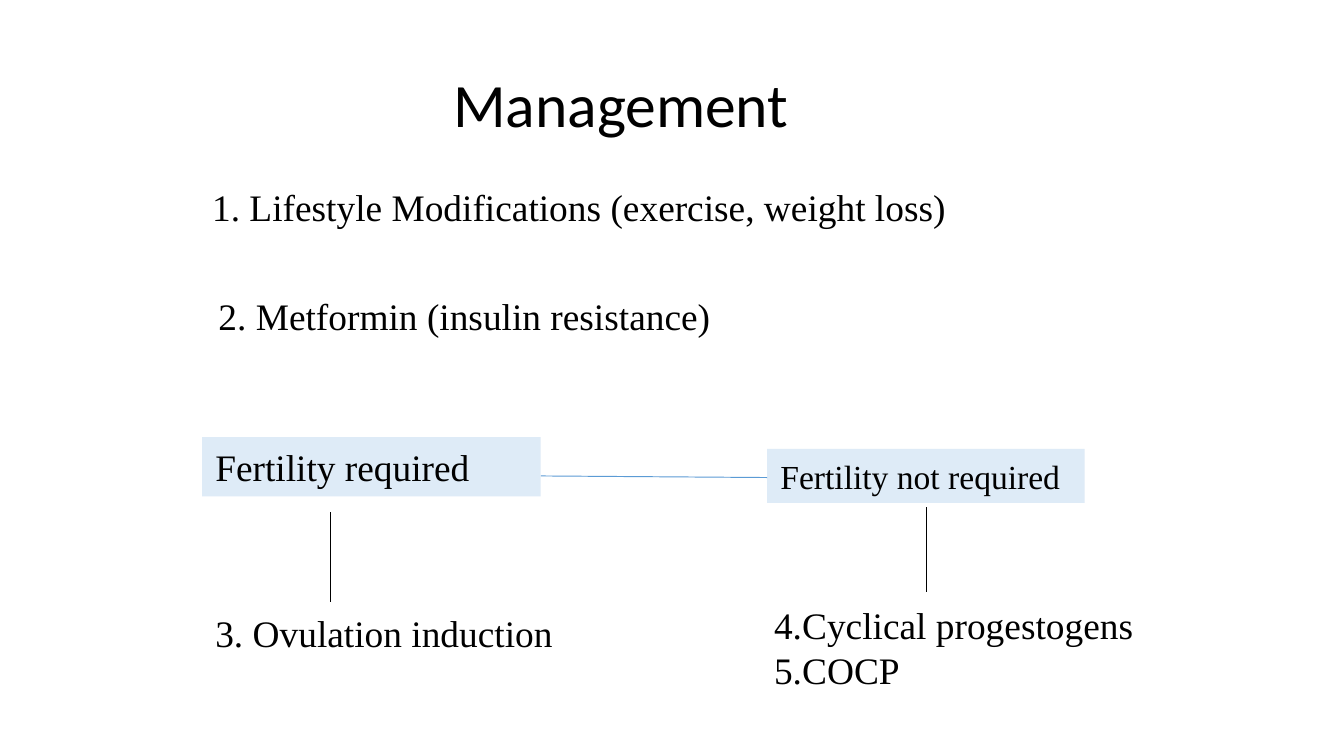
from dataclasses import dataclass

from lxml import etree
from pptx import Presentation
from pptx.dml.color import RGBColor
from pptx.enum import shapes, text
from pptx.oxml import ns
from pptx.util import Cm, Pt


@dataclass(frozen=True)
class Theme:
    ink: RGBColor = RGBColor(0x00, 0x00, 0x00)
    panel: RGBColor = RGBColor(0xDE, 0xEB, 0xF7)
    link: RGBColor = RGBColor(0x5B, 0x9B, 0xD5)
    heading_font: str = "Calibri"
    body_font: str = "Times New Roman"
    title_size: int = 33
    body_size: int = 20
    small_size: int = 18
    line_width: float = 0.5


THEME = Theme()


def add_run(paragraph, wording, font_name, size):
    run = paragraph.add_run()
    run.text = wording
    run.font.name = font_name
    run.font.size = Pt(size)
    run.font.color.rgb = THEME.ink


def write_lines(frame, lines, size, indent=0):
    """Fill a frame with left-aligned body paragraphs, anchored at the top."""
    frame.word_wrap = True
    frame.vertical_anchor = text.MSO_ANCHOR.TOP
    for number, line in enumerate(lines):
        paragraph = frame.add_paragraph() if number else frame.paragraphs[0]
        paragraph.alignment = text.PP_ALIGN.LEFT
        if indent:
            paragraph._p.get_or_add_pPr().set("marL", str(Cm(indent)))
        add_run(paragraph, line, THEME.body_font, size)
    frame.auto_size = text.MSO_AUTO_SIZE.SHAPE_TO_FIT_TEXT


def set_title(slide, wording, left, top, width, height):
    title = slide.shapes.title
    title.left, title.top = Cm(left), Cm(top)
    title.width, title.height = Cm(width), Cm(height)
    frame = title.text_frame
    frame.auto_size = text.MSO_AUTO_SIZE.NONE
    frame.vertical_anchor = text.MSO_ANCHOR.MIDDLE
    frame.margin_top = frame.margin_bottom = Cm(0.25)
    heading = frame.paragraphs[0]
    heading.alignment = text.PP_ALIGN.CENTER
    heading.line_spacing = 0.9
    add_run(heading, wording, THEME.heading_font, THEME.title_size)


def add_treatment(slide, lines, left, top, width, height, indent=0):
    treatment = slide.shapes.add_textbox(Cm(left), Cm(top), Cm(width), Cm(height))
    write_lines(treatment.text_frame, lines, THEME.body_size, indent)


def add_option(slide, wording, left, top, width, height, size):
    """Add a shaded box that names one branch of the decision."""
    option = slide.shapes.add_shape(
        shapes.MSO_SHAPE.RECTANGLE, Cm(left), Cm(top), Cm(width), Cm(height))
    option.shadow.inherit = False
    option.fill.solid()
    option.fill.fore_color.rgb = THEME.panel
    option.line.fill.background()
    write_lines(option.text_frame, [wording], size)


def add_line(slide, start_x, start_y, end_x, end_y, color):
    line = slide.shapes.add_connector(
        shapes.MSO_CONNECTOR.STRAIGHT,
        Cm(start_x), Cm(start_y), Cm(end_x), Cm(end_y))
    line.line.color.rgb = color
    line.line.width = Pt(THEME.line_width)
    etree.SubElement(line._element.spPr, ns.qn("a:effectLst"))


def main():
    deck = Presentation()
    deck.slide_width, deck.slide_height = Cm(25.4), Cm(14.28)
    slide = deck.slides.add_slide(deck.slide_layouts.get_by_name("Title Only"))

    set_title(slide, "Management", 6.25, 1.24, 10.97, 1.6)

    add_treatment(slide, ["1. Lifestyle Modifications (exercise, weight loss)"],
                  3.58, 3.35, 16.13, 1.7, indent=0.18)
    add_treatment(slide, ["2. Metformin (insulin resistance)"],
                  3.58, 5.41, 10.44, 1.12, indent=0.3)

    add_option(slide, "Fertility required", 3.82, 8.26, 6.4, 1.12, THEME.body_size)
    add_option(slide, "Fertility not required", 14.5, 8.48, 6.0, 1.02, THEME.small_size)

    add_line(slide, 6.25, 9.68, 6.25, 11.38, THEME.ink)
    add_line(slide, 17.5, 9.58, 17.5, 11.18, THEME.ink)
    add_line(slide, 10.22, 8.99, 14.5, 9.02, THEME.link)

    add_treatment(slide, ["3. Ovulation induction"], 3.82, 11.4, 7.09, 1.12)
    add_treatment(slide, ["4.Cyclical progestogens", "5.COCP"],
                  14.38, 11.25, 8.36, 1.96)

    deck.save("out.pptx")


if __name__ == "__main__":
    main()
